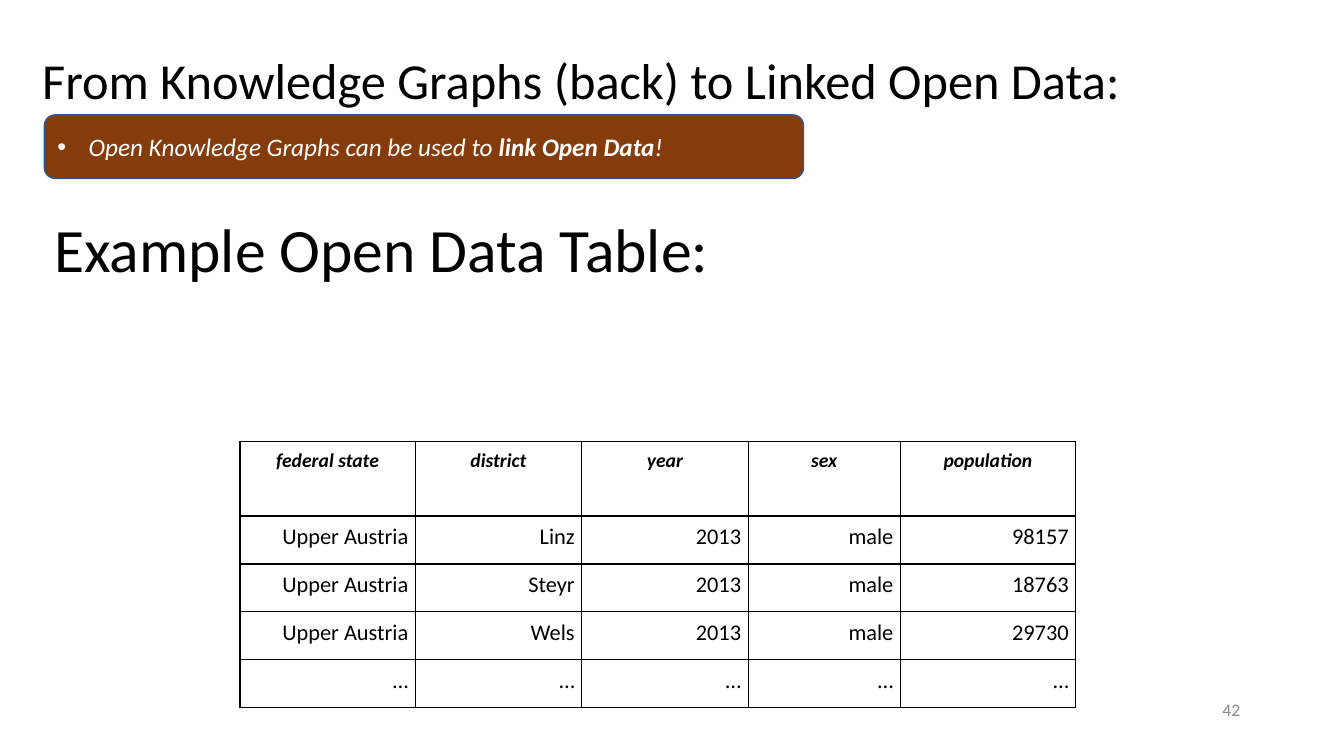
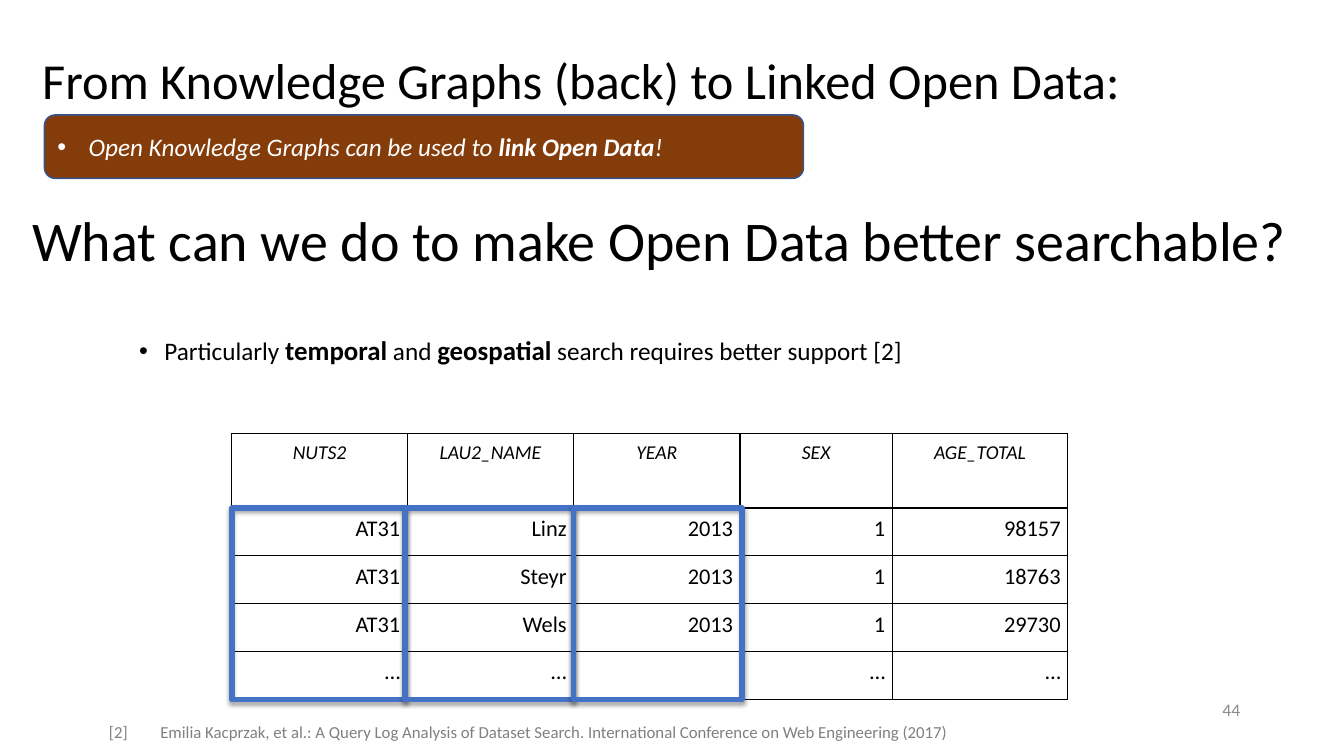
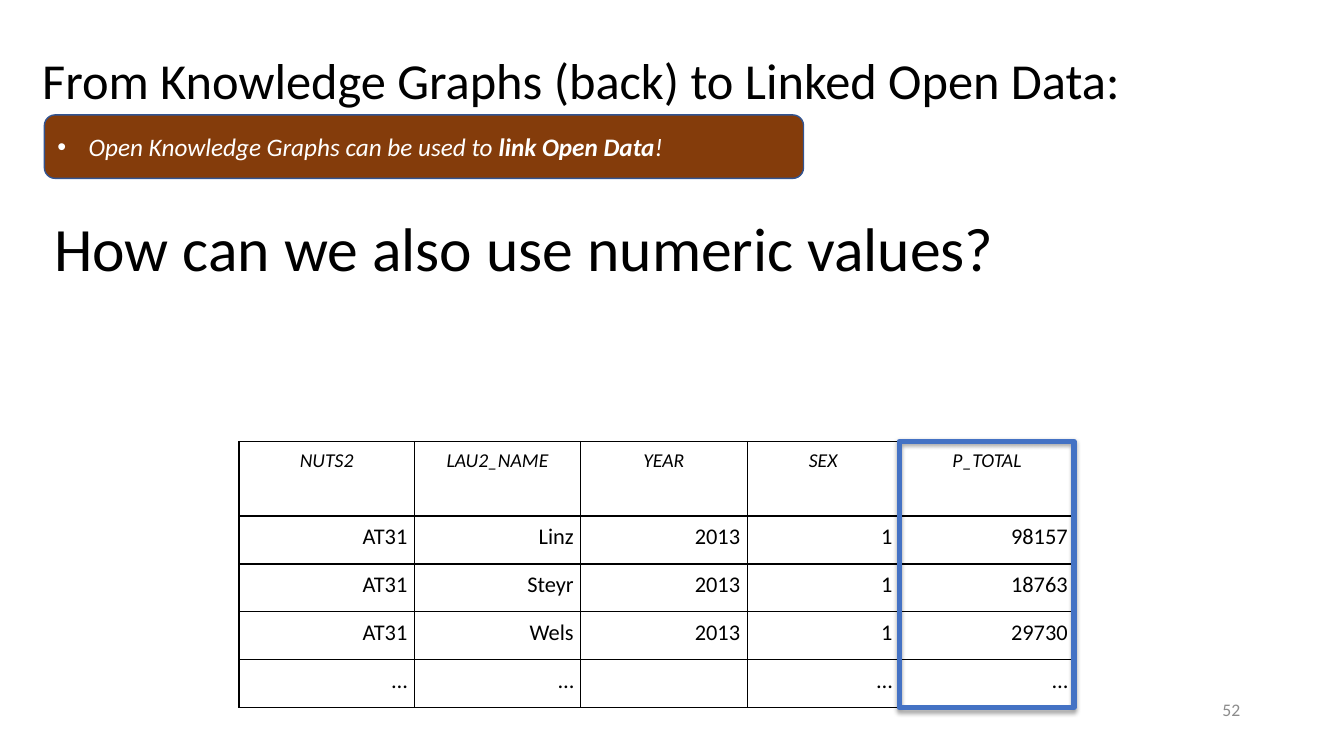
"""Build three slides on linking open data tables with knowledge graphs."""
from lxml import etree
from pptx import Presentation
from pptx.dml.color import RGBColor
from pptx.enum.shapes import MSO_SHAPE
from pptx.enum.text import MSO_ANCHOR, PP_ALIGN
from pptx.oxml import parse_xml
from pptx.oxml.ns import nsdecls, qn
from pptx.util import Inches, Pt

LEFT, CENTER, RIGHT = PP_ALIGN.LEFT, PP_ALIGN.CENTER, PP_ALIGN.RIGHT
TOP, MIDDLE = MSO_ANCHOR.TOP, MSO_ANCHOR.MIDDLE
CALLOUT, RECTANGLE = MSO_SHAPE.ROUNDED_RECTANGULAR_CALLOUT, MSO_SHAPE.RECTANGLE

FONT = "Calibri"
BLACK = RGBColor(0x00, 0x00, 0x00)
WHITE = RGBColor(0xFF, 0xFF, 0xFF)
BROWN = RGBColor(0x84, 0x3C, 0x0B)
NAVY = RGBColor(0x32, 0x54, 0x91)
BLUE = RGBColor(0x44, 0x72, 0xC4)
NUMBER_GRAY = RGBColor(0x8C, 0x8C, 0x8C)
NOTE_GRAY = RGBColor(0x80, 0x80, 0x80)

HEADING = "From Knowledge Graphs (back) to Linked Open Data:"
MESSAGE = [
    ("Open Knowledge Graphs can be used to ", {}),
    ("link Open Data", {"bold": True}),
    ("!", {}),
]
STRONG = {"size": Pt(19.2), "bold": True}
SUPPORT = [
    ("Particularly ", {}),
    ("temporal", STRONG),
    (" and ", {}),
    ("geospatial", STRONG),
    (" search requires better support [2]", {}),
]
CITATION = [
    "[2]",
    "Emilia Kacprzak, et al.: A Query Log Analysis of Dataset Search. "
    "International Conference on Web Engineering (2017)",
]
POPULATION = [("Linz", "98157"), ("Steyr", "18763"), ("Wels", "29730")]
COLUMN_WIDTHS = [1.74, 1.65, 1.65, 1.51, 1.74]
TABLE_HEIGHT, HEADER_HEIGHT = 2.64, 0.74
ROW_HEIGHT = (TABLE_HEIGHT - HEADER_HEIGHT) / 4
ROW_HEIGHTS = [HEADER_HEIGHT] + [ROW_HEIGHT] * 4

SLIDES = [
    {
        "number": "42",
        "title": ("Example Open Data Table:", 44, (0.44, 1.78, 11.5, 1.45)),
        "table": (2.38, 4.38),
        "header": ["federal state", "district", "year", "sex", "population"],
        "bold": True,
        "codes": ("Upper Austria", "male"),
        "last": ["…"] * 5,
        "highlights": [],
    },
    {
        "number": "44",
        "title": ("What can we do to make Open Data better searchable?", 40,
                  (0.22, 1.69, 12.88, 1.45)),
        "table": (2.3, 4.3),
        "header": ["NUTS2", "LAU2_NAME", "YEAR", "SEX", "AGE_TOTAL"],
        "bold": False,
        "codes": ("AT31", "1"),
        "last": ["…", "…", "", "…", "…"],
        "highlights": [(2.3, 5.04, 1.72, 1.9), (4.02, 5.04, 1.67, 1.9),
                       (5.69, 5.04, 1.67, 1.9)],
    },
    {
        "number": "52",
        "title": ("How can we also use numeric values?", 44, (0.44, 1.77, 11.5, 1.45)),
        "table": (2.37, 4.38),
        "header": ["NUTS2", "LAU2_NAME", "YEAR", "SEX", "P_TOTAL"],
        "bold": False,
        "codes": ("AT31", "1"),
        "last": ["…", "…", "", "…", "…"],
        "highlights": [(8.92, 4.38, 1.73, 2.64)],
    },
]


def write(frame, runs, size, color, align=LEFT, anchor=MIDDLE, spacing=None,
          indent=None, **font_format):
    """Fill a text frame with one paragraph, bulleted if it has an indent."""
    frame.word_wrap = True
    frame.vertical_anchor = anchor
    para = frame.paragraphs[0]
    para.alignment = align
    if spacing:
        para.line_spacing = spacing
    if indent:
        properties = para._p.get_or_add_pPr()
        properties.set("marL", str(Inches(indent)))
        properties.set("indent", str(-Inches(indent)))
        etree.SubElement(properties, qn("a:buFont")).set("typeface", "Arial")
        etree.SubElement(properties, qn("a:buChar")).set("char", "•")
    for text, extra in runs:
        span = para.add_run()
        span.text = text
        formats = {"name": FONT, "size": Pt(size), **font_format, **extra}
        for name, value in formats.items():
            setattr(span.font, name, value)
        span.font.color.rgb = color


def add_grid(page, left, top, widths, heights, margins, bordered):
    """Add a plain table and return it."""
    grid = page.shapes.add_table(
        len(heights), len(widths), Inches(left), Inches(top),
        Inches(sum(widths)), Inches(sum(heights))).table
    grid.first_row = grid.horz_banding = False
    for column, width in zip(grid.columns, widths):
        column.width = Inches(width)
    for row, height in zip(grid.rows, heights):
        row.height = Inches(height)
    for cell in grid.iter_cells():
        cell.margin_left = cell.margin_right = Inches(margins[0])
        cell.margin_top = cell.margin_bottom = Inches(margins[1])
        if bordered:
            for side in ("lnL", "lnR", "lnT", "lnB"):
                cell._tc.get_or_add_tcPr().append(parse_xml(
                    f'<a:{side} {nsdecls("a")} w="{Pt(1)}"><a:solidFill>'
                    f'<a:srgbClr val="{BLACK}"/></a:solidFill></a:{side}>'))
        cell.fill.background()
    return grid


deck = Presentation()
deck.slide_width, deck.slide_height = Inches(13.33), Inches(7.5)

for content in SLIDES:
    page = deck.slides.add_slide(deck.slide_layouts[6])

    title, title_size, title_area = content["title"]
    for text, size, color, area, align, spacing in [
        (HEADING, 36, BLACK, (0.32, 0.1, 11.5, 1.45), LEFT, 0.9),
        (title, title_size, BLACK, title_area, LEFT, 0.9),
        (content["number"], 12.6, NUMBER_GRAY, (11.58, 6.87, 0.82, 0.34), RIGHT, None),
    ]:
        box = page.shapes.add_textbox(*map(Inches, area))
        write(box.text_frame, [(text, {})], size, color, align, spacing=spacing)

    callout = page.shapes.add_shape(CALLOUT, *map(Inches, (0.44, 1.14, 7.53, 0.63)))
    callout.shadow.inherit = False
    for index, value in enumerate((-0.16, 0.5, 0.17)):
        callout.adjustments[index] = value
    callout.fill.solid()
    callout.fill.fore_color.rgb = BROWN
    callout.line.color.rgb = NAVY
    callout.line.width = Pt(1)
    write(callout.text_frame, MESSAGE, 18, WHITE, indent=0.31, italic=True)

    state, sex = content["codes"]
    rows = [content["header"]]
    rows += [[state, district, "2013", sex, total] for district, total in POPULATION]
    rows.append(content["last"])
    grid = add_grid(page, *content["table"], COLUMN_WIDTHS, ROW_HEIGHTS, (0.07, 0.07), True)
    for row_index, row in enumerate(rows):
        for column_index, text in enumerate(row):
            frame = grid.cell(row_index, column_index).text_frame
            if text and row_index == 0:
                write(frame, [(text, {})], 14, BLACK, CENTER, TOP,
                      bold=content["bold"], italic=True)
            elif text:
                write(frame, [(text, {})], 16, BLACK, RIGHT, TOP)

    for area in content["highlights"]:
        highlight = page.shapes.add_shape(RECTANGLE, *map(Inches, area))
        highlight.fill.background()
        highlight.line.color.rgb = BLUE
        highlight.line.width = Pt(4)
        highlight.shadow.inherit = False
        highlight._element.spPr.find(qn("a:effectLst")).append(parse_xml(
            f'<a:outerShdw {nsdecls("a")} blurRad="{Pt(3)}" dist="{Pt(1.8)}" '
            f'dir="5400000" rotWithShape="0"><a:srgbClr val="{BLACK}">'
            '<a:alpha val="35000"/></a:srgbClr></a:outerShdw>'))

page = deck.slides[1]
box = page.shapes.add_textbox(*map(Inches, (1.38, 3.3, 10.81, 0.4)))
box.text_frame.margin_left = box.text_frame.margin_right = 0
write(box.text_frame, SUPPORT, 18, BLACK, anchor=TOP, spacing=0.9, indent=0.25)

reference = add_grid(page, 0.97, 7.12, [0.51, 10.63], [0.31], (0.11, 0.05), False)
for cell, text in zip(reference.iter_cells(), CITATION):
    write(cell.text_frame, [(text, {})], 12, NOTE_GRAY, anchor=TOP)

deck.save("out.pptx")
